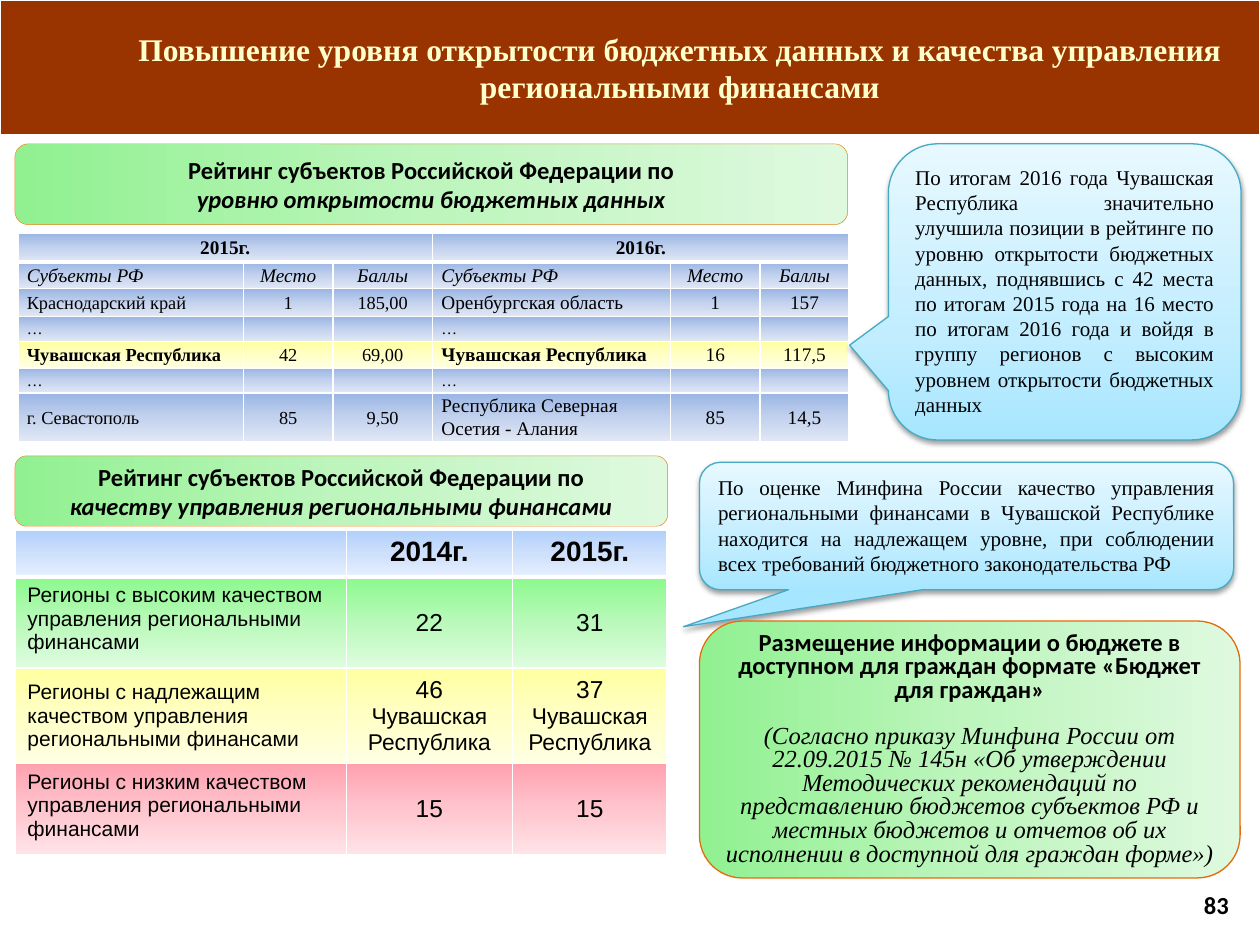
from lxml import etree
from pptx import Presentation
from pptx.dml.color import RGBColor
from pptx.enum.shapes import MSO_SHAPE
from pptx.enum.text import MSO_ANCHOR, PP_ALIGN
from pptx.oxml import parse_xml
from pptx.oxml.ns import nsdecls, qn
from pptx.util import Cm, Pt

LEFT, CENTER, RIGHT, JUSTIFY = PP_ALIGN.LEFT, PP_ALIGN.CENTER, PP_ALIGN.RIGHT, PP_ALIGN.JUSTIFY
TOP, MIDDLE = MSO_ANCHOR.TOP, MSO_ANCHOR.MIDDLE
RECTANGLE, ROUNDED = MSO_SHAPE.RECTANGLE, MSO_SHAPE.ROUNDED_RECTANGLE
CALLOUT = MSO_SHAPE.ROUNDED_RECTANGULAR_CALLOUT
SERIF, SANS, ARIAL = "Times New Roman", "Calibri", "Arial"

COLORS = {"band": "993300", "title": "FFFFCC", "white": "FFFFFF", "text": "000000",
          "banner_line": "F57E1B", "budget_line": "E46C0A", "callout_line": "46AAC5"}
# Gradients: (position in percent, colour) stops
GRADIENTS = {
    "banner": [(0, "91F191"), (50, "BDF5BD"), (100, "DFF9DF")],
    "callout": [(0, "A7E6FF"), (35, "C1EDFF"), (100, "E7F8FF")],
    "steel": [(0, "9AB5E4"), (50, "C2D1ED"), (100, "E1E8F5")],
    "blue": [(0, "B0CFFB"), (50, "CEE0FC"), (100, "E6EFFD")],
    "green": [(0, "8CF98D"), (50, "BAF9BB"), (100, "DEFCDE")],
    "yellow": [(0, "FFFFA0"), (50, "FFFFC5"), (100, "FFFFE3")],
    "red": [(0, "FFA0AF"), (50, "FFC5CE"), (100, "FFE3E7")],
}

OPENNESS_COLUMNS = [4.55, 1.8, 2.01, 4.8, 1.8, 1.8]
OPENNESS_ROWS = [0.58, 0.54, 0.56, 0.5, 0.54, 0.5, 0.98]
OPENNESS_DATA = [
    ["2015г.", "", "", "2016г.", "", ""],
    ["Субъекты РФ", "Место", "Баллы"] * 2,
    ["Краснодарский край", "1", "185,00", "Оренбургская область", "1", "157"],
    ["…", "", ""] * 2,
    ["Чувашская Республика", "42", "69,00", "Чувашская Республика", "16", "117,5"],
    ["…", "", ""] * 2,
    ["г. Севастополь", "85", "9,50", "Республика Северная Осетия - Алания", "85", "14,5"],
]
QUALITY_COLUMNS = [6.68, 3.35, 3.12]
QUALITY_ROWS = [0.93, 1.83, 1.93, 1.83]
QUALITY_DATA = [
    ("blue", ["", "2014г.", "2015г."]),
    ("green", ["Регионы с высоким качеством управления региональными финансами", "22", "31"]),
    ("yellow", ["Регионы с надлежащим качеством управления региональными финансами",
                "46\nЧувашская Республика", "37\nЧувашская Республика"]),
    ("red", ["Регионы с низким качеством управления региональными финансами", "15", "15"]),
]


def gradient_xml(name, angle):
    stops = "".join(f'<a:gs pos="{position * 1000}"><a:srgbClr val="{color}"/></a:gs>'
                    for position, color in GRADIENTS[name])
    return parse_xml(f'<a:gradFill {nsdecls("a")} rotWithShape="1"><a:gsLst>{stops}</a:gsLst>'
                     f'<a:lin ang="{angle * 60000}" scaled="0"/></a:gradFill>')


def write_paragraphs(frame, paragraphs, anchor=MIDDLE, **common):
    """Fill a text frame from (text, font values) pairs; common holds paragraph values."""
    frame.word_wrap = True
    frame.vertical_anchor = anchor
    for index, (text, font_values) in enumerate(paragraphs):
        paragraph = frame.paragraphs[0] if index == 0 else frame.add_paragraph()
        for name, value in common.items():
            setattr(paragraph, name, value)
        run = paragraph.add_run()
        run.text = text
        values = dict(font_values)
        run.font.color.rgb = RGBColor.from_string(COLORS[values.pop("color", "text")])
        for name, value in values.items():
            setattr(run.font, name, value)


def add_box(slide, kind, box, line, width, gradient=None, angle=0):
    shape = slide.shapes.add_shape(kind, *map(Cm, box))
    shape.shadow.inherit = False
    shape.line.color.rgb = RGBColor.from_string(COLORS[line])
    shape.line.width = Pt(width)
    if gradient:
        shape._element.spPr.find(qn("a:prstGeom")).addnext(gradient_xml(gradient, angle))
    return shape


def add_title(slide, box, text):
    band = add_box(slide, RECTANGLE, (0, 0, 25.4, 2.72), "white", 0.75)
    band.fill.solid()
    band.fill.fore_color.rgb = RGBColor.from_string(COLORS["band"])
    slide.shapes._spTree.insert(2, band._element)  # behind the title
    title = slide.shapes.title
    title.left, title.top, title.width, title.height = map(Cm, box)
    font = {"size": Pt(18), "name": SERIF, "bold": True, "color": "title"}
    write_paragraphs(title.text_frame, [(text, font)], alignment=CENTER)


def add_banner(slide, box, subject):
    banner = add_box(slide, ROUNDED, box, "banner_line", 0.25, "banner")
    font = {"size": Pt(14), "name": SANS, "bold": True}
    write_paragraphs(banner.text_frame, [("Рейтинг субъектов Российской Федерации по", font),
                                         (subject, {**font, "italic": True})], alignment=CENTER)


def add_callout(slide, box, pointer, text):
    callout = add_box(slide, CALLOUT, box, "callout_line", 0.75, "callout", 270)
    callout.adjustments[0], callout.adjustments[1] = pointer
    effects = callout._element.spPr.find(qn("a:effectLst"))
    shadow = etree.SubElement(effects, qn("a:outerShdw"), blurRad="40000", dist="20000",
                              dir="5400000", rotWithShape="0")
    color = etree.SubElement(shadow, qn("a:srgbClr"), val=COLORS["text"])
    etree.SubElement(color, qn("a:alpha"), val="38000")
    write_paragraphs(callout.text_frame, [(text, {"size": Pt(12), "name": SERIF})],
                     TOP, alignment=JUSTIFY)


def add_budget_box(slide, box):
    shape = add_box(slide, ROUNDED, box, "budget_line", 0.75, "banner")
    write_paragraphs(shape.text_frame, [
        ("Размещение информации о бюджете в доступном для граждан формате «Бюджет для граждан»",
         {"size": Pt(14), "name": SANS, "bold": True}),
        ("(Согласно приказу Минфина России от 22.09.2015 № 145н «Об утверждении Методических "
         "рекомендаций по представлению бюджетов субъектов РФ и местных бюджетов и отчетов об их "
         "исполнении в доступной для граждан форме»)",
         {"size": Pt(14), "name": SERIF, "italic": True}),
    ], alignment=CENTER, line_spacing=0.8)
    shape.text_frame.paragraphs[1].space_before = Pt(13)


def add_grid(slide, left, top, columns, rows):
    table = slide.shapes.add_table(len(rows), len(columns), Cm(left), Cm(top),
                                   Cm(sum(columns)), Cm(sum(rows))).table
    table.first_row = table.horz_banding = False
    for column, width in zip(table.columns, columns):
        column.width = Cm(width)
    for row, height in zip(table.rows, rows):
        row.height = Cm(height)
    return table


def format_cell(cell, gradient, header, empty_size):
    """White borders, a heavier one under the header, and a gradient fill."""
    properties = cell._tc.get_or_add_tcPr()
    for side in ("lnL", "lnR", "lnT", "lnB"):
        width = Pt(3 if header and side == "lnB" else 1)
        properties.append(parse_xml(
            f'<a:{side} {nsdecls("a")} w="{width}"><a:solidFill>'
            f'<a:srgbClr val="{COLORS["white"]}"/></a:solidFill></a:{side}>'))
    properties.append(gradient_xml(gradient, 90))
    if not cell.text:
        etree.SubElement(cell.text_frame.paragraphs[0]._p, qn("a:endParaRPr"),
                         sz=str(empty_size * 100))


def add_openness_table(slide, left, top):
    table = add_grid(slide, left, top, OPENNESS_COLUMNS, OPENNESS_ROWS)
    for start in (0, 3):
        table.cell(0, start).merge(table.cell(0, start + 2))
    for row, texts in enumerate(OPENNESS_DATA):
        highlighted = texts[0] == "Чувашская Республика"
        for column, text in enumerate(texts):
            cell = table.cell(row, column)
            cell.margin_left = cell.margin_right = Cm(0.18)
            cell.margin_top = cell.margin_bottom = 0
            name_column = column % 3 == 0
            size = 9 if text == "…" else 10.5 if row > 1 and column < 3 else 11
            font = {"size": Pt(size), "name": SERIF, "italic": row == 1,
                    "bold": row == 0 or (highlighted and name_column)}
            if text:
                write_paragraphs(cell.text_frame, [(text, font)], line_spacing=1.07,
                                 alignment=LEFT if name_column and row else CENTER)
                cell.vertical_anchor = MIDDLE
            format_cell(cell, "yellow" if highlighted else "steel", row == 0, 9)


def add_quality_table(slide, left, top):
    table = add_grid(slide, left, top, QUALITY_COLUMNS, QUALITY_ROWS)
    for row, (gradient, texts) in enumerate(QUALITY_DATA):
        for column, text in enumerate(texts):
            cell = table.cell(row, column)
            sizes = [16] if row == 0 else [12] if column == 0 else [14, 13]
            lines = [(line, {"size": Pt(size), "name": ARIAL, "bold": row == 0})
                     for line, size in zip(text.split("\n"), sizes) if line]
            write_paragraphs(cell.text_frame, lines, alignment=CENTER if column else LEFT)
            cell.vertical_anchor = MIDDLE if row == 2 or (row and column) else TOP
            format_cell(cell, gradient, row == 0, 16)


def add_page_number(slide, box, number):
    text_box = slide.shapes.add_textbox(*map(Cm, box))
    font = {"size": Pt(14), "name": SANS, "bold": True}
    write_paragraphs(text_box.text_frame, [(number, font)], alignment=RIGHT)


def main():
    presentation = Presentation()
    presentation.slide_width, presentation.slide_height = Cm(25.4), Cm(19.05)
    slide = presentation.slides.add_slide(presentation.slide_layouts[5])
    add_title(slide, (2.11, 0.46, 23.19, 1.8),
              "Повышение уровня открытости бюджетных данных и качества управления "
              "региональными финансами")
    # Quality of financial management
    add_callout(slide, (14.1, 9.32, 10.77, 2.57), (-0.53, 0.79),
                "По оценке Минфина России качество управления региональными финансами в Чувашской "
                "Республике находится на надлежащем уровне, при соблюдении всех требований "
                "бюджетного законодательства РФ")
    add_banner(slide, (0.3, 9.19, 13.16, 1.42), "качеству управления региональными финансами")
    add_quality_table(slide, 0.3, 10.69)
    # Openness of budget data
    add_banner(slide, (0.3, 2.9, 16.79, 1.63), "уровню открытости бюджетных данных")
    add_openness_table(slide, 0.36, 4.7)
    add_callout(slide, (17.91, 2.9, 7.11, 5.97), (-0.61, 0.18),
                "По итогам 2016 года Чувашская Республика значительно улучшила позиции в рейтинге "
                "по уровню открытости бюджетных данных, поднявшись с 42 места по итогам 2015 года "
                "на 16 место по итогам 2016 года и войдя в группу регионов с высоким уровнем "
                "открытости бюджетных данных")
    # Budget for citizens
    add_budget_box(slide, (14.1, 12.52, 10.9, 5.18))
    add_page_number(slide, (22.1, 17.73, 2.92, 1.02), "83")
    presentation.save("out.pptx")


if __name__ == "__main__":
    main()
